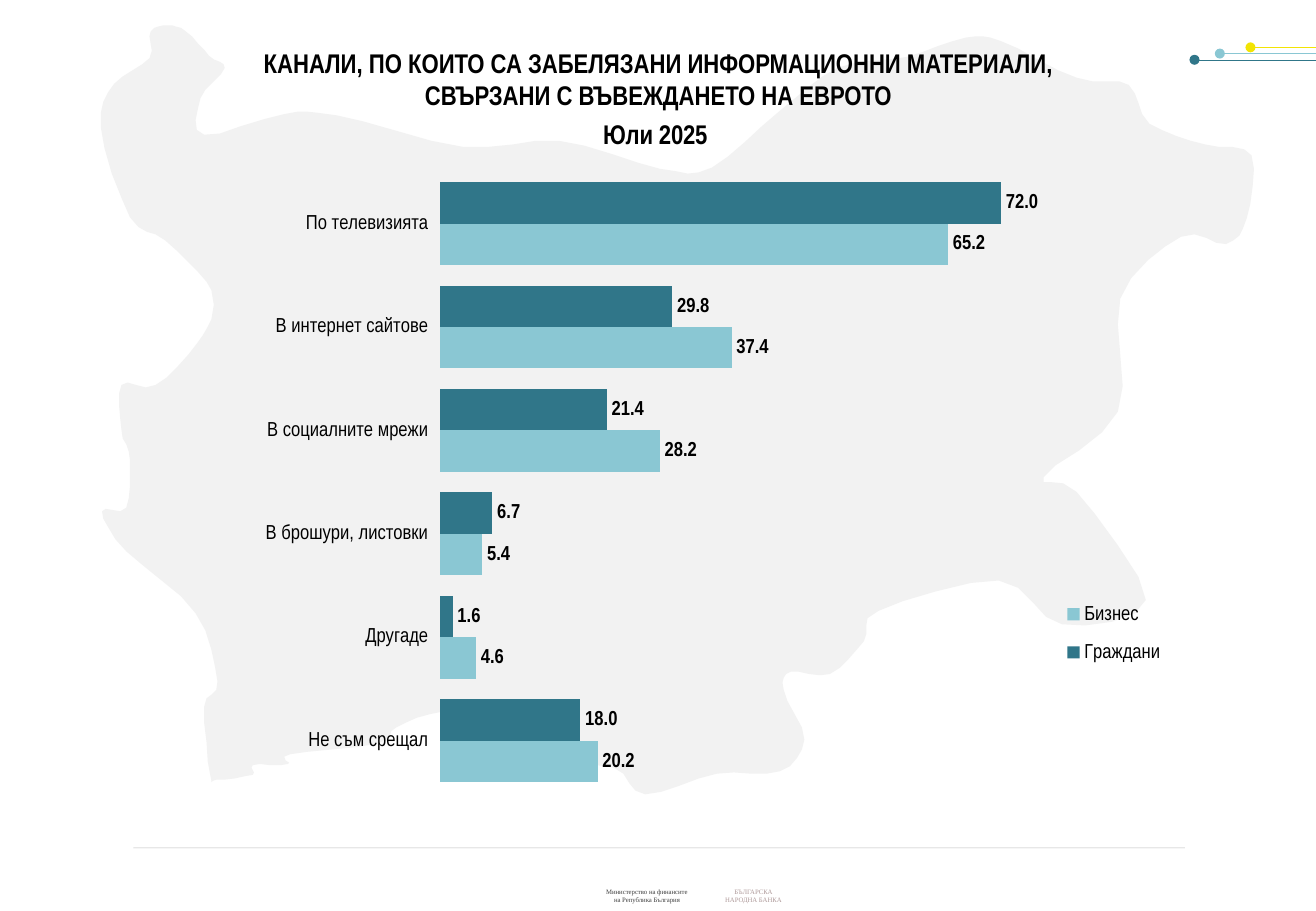
from lxml import etree
from pptx import Presentation
from pptx.chart.data import CategoryChartData
from pptx.dml.color import RGBColor
from pptx.enum.chart import XL_CHART_TYPE, XL_LABEL_POSITION, XL_LEGEND_POSITION, XL_TICK_MARK
from pptx.enum.shapes import MSO_CONNECTOR
from pptx.enum.text import PP_ALIGN
from pptx.oxml.ns import qn
from pptx.util import Cm, Pt

BARS = XL_CHART_TYPE.BAR_CLUSTERED
OUTER = XL_LABEL_POSITION.OUTSIDE_END
RIGHT = XL_LEGEND_POSITION.RIGHT
TICK = XL_TICK_MARK.OUTSIDE
LINE = MSO_CONNECTOR.STRAIGHT
CENTER = PP_ALIGN.CENTER

COLORS = {"teal": "307689", "sky": "8AC7D3", "yellow": "F2E404", "rule": "A6A6A6",
          "map": "F2F2F2", "black": "000000", "gray": "404040", "mauve": "AF9A9A"}
NARROW, ROMAN = "Arial Narrow", "Times New Roman"

CATS = ["По телевизията", "В интернет сайтове", "В социалните мрежи",
        "В брошури, листовки", "Другаде", "Не съм срещал"]
SERIES = [("Граждани", "teal", [72, 29.8, 21.4, 6.7, 1.6, 18]),
          ("Бизнес", "sky", [65.2, 37.4, 28.2, 5.4, 4.6, 20.2])]
MONTH = "Юли 2025"
FRAME = (2.21, 1.68, 23.95, 15.32)
PLOT = {"x": 0.29, "y": 0.125, "w": 0.68, "h": 0.847}
PLOT["x"] = 0.292
LEGEND = {"x": 0.82, "y": 0.69, "w": 0.12, "h": 0.13}
HEAD = {"x": 0.43, "y": 0.05}

# Left, top, width, height in cm
TEXTS = [
    ((12.37, 18.44, 2.31, 0.61), ["Министерство на финансите на Република България"],
     {"size": 4, "name": ROMAN, "color": "gray"}),
    ((14.86, 18.44, 1.78, 0.61), ["БЪЛГАРСКА НАРОДНА БАНКА"],
     {"size": 4, "name": ROMAN, "color": "mauve"}),
    ((0.33, 0.84, 26.87, 1.63),
     ["КАНАЛИ, ПО КОИТО СА ЗАБЕЛЯЗАНИ ИНФОРМАЦИОННИ МАТЕРИАЛИ,",
      "СВЪРЗАНИ С ВЪВЕЖДАНЕТО НА ЕВРОТО"],
     {"size": 16, "name": NARROW, "color": "black", "bold": True}),
]

# Start x, end x, y in cm, colour, extra
LINES = [(24.97, 27.51, 1.25, "teal", "dot"), (26.14, 27.51, 0.99, "yellow", "dot"),
         (25.5, 27.51, 1.12, "sky", "dot"), (2.79, 24.77, 17.73, "rule", "faint")]

# Corner points of the country outline, in hundredths of an inch
MAP = [
    (124, 26), (138, 21), (153, 26), (172, 46), (185, 56), (165, 81), (168, 111),
    (234, 94), (277, 95), (381, 121), (460, 116), (543, 139), (586, 138), (641, 92),
    (689, 56), (746, 47), (795, 31), (824, 34), (886, 64), (929, 70), (946, 102),
    (992, 119), (1030, 128), (1026, 180), (1009, 201), (972, 195), (922, 246),
    (920, 339), (859, 393), (886, 405), (943, 494), (874, 514), (822, 478), (723, 503),
    (711, 528), (683, 555), (651, 553), (645, 568), (662, 609), (642, 635), (590, 637),
    (531, 654), (505, 632), (442, 624), (404, 593), (364, 586), (326, 599), (311, 612),
    (239, 621), (237, 629), (208, 630), (208, 638), (178, 642), (173, 638), (168, 582),
    (179, 561), (161, 505), (104, 454), (84, 421), (104, 418), (107, 379), (100, 354),
    (100, 317), (128, 317), (162, 283), (175, 257), (170, 232), (136, 198), (107, 179),
    (83, 105), (94, 69), (123, 48),
]
STEPS = 4


def tint(name):
    return RGBColor.from_string(COLORS[name])


def style(font, form):
    for key, val in form.items():
        if key == "color":
            font.color.rgb = tint(val)
        else:
            setattr(font, key, Pt(val) if key == "size" else val)


def add_line(slide, start, end, y, color, extra):
    line = slide.shapes.add_connector(LINE, Cm(start), Cm(y), Cm(end), Cm(y))
    line.line.color.rgb = tint(color)
    line.line.width = Pt(0.25)
    props = line.element.spPr
    ln = props.find(qn("a:ln"))
    if extra == "dot":
        etree.SubElement(ln, qn("a:headEnd"), type="oval")
    else:
        etree.SubElement(ln.find(".//" + qn("a:srgbClr")), qn("a:alpha"), val="74000")
    etree.SubElement(props, qn("a:effectLst"))


def smooth(points):
    """Round a closed outline with a spline that keeps every corner point."""
    curve = []
    for i, b in enumerate(points):
        a, c, d = (points[(i + k) % len(points)] for k in (-1, 1, 2))
        for step in range(STEPS):
            t = step / STEPS
            curve.append(tuple(
                q + t / 2 * (r - p + t * (2 * p - 5 * q + 4 * r - s + t * (3 * (q - r) + s - p)))
                for p, q, r, s in zip(a, b, c, d)))
    return curve


def add_map(slide):
    first, *rest = smooth(MAP)
    build = slide.shapes.build_freeform(*first, scale=Cm(2.54) / 100)
    build.add_line_segments(rest, close=True)
    land = build.convert_to_shape()
    land.shadow.inherit = False
    land.fill.solid()
    land.fill.fore_color.rgb = tint("map")
    land.line.fill.background()


def add_text(slide, box, lines, form):
    frame = slide.shapes.add_textbox(*map(Cm, box)).text_frame
    frame.word_wrap = True
    frame.text = "\n".join(lines)
    for para in frame.paragraphs:
        para.alignment = CENTER
        style(para.font, form)


def place(part, spot, after=None):
    """Give a chart part a fixed place, as shares of the chart frame."""
    for old in part.findall(qn("c:layout")):
        part.remove(old)
    layout = etree.Element(qn("c:layout"))
    man = etree.SubElement(layout, qn("c:manualLayout"))
    if after is None:
        etree.SubElement(man, qn("c:layoutTarget"), val="inner")
    for key in "xy":
        etree.SubElement(man, qn(f"c:{key}Mode"), val="edge")
    for key, val in spot.items():
        etree.SubElement(man, qn(f"c:{key}"), val=str(val))
    part.insert(0 if after is None else part.index(part.find(qn(after))) + 1, layout)


def add_bars(slide):
    data = CategoryChartData(number_format="0.0")
    data.categories = CATS
    for name, _, vals in SERIES:
        data.add_series(name, vals)
    chart = slide.shapes.add_chart(BARS, *map(Cm, FRAME), data).chart
    base = {"size": 12, "name": NARROW, "color": "black"}
    style(chart.font, {**base, "size": 10})

    chart.has_title = True
    frame = chart.chart_title.text_frame
    frame.text = MONTH
    style(frame.paragraphs[0].runs[0].font, {**base, "size": 16, "bold": True})
    chart.has_legend = True
    chart.legend.position = RIGHT
    chart.legend.include_in_layout = False
    style(chart.legend.font, base)

    cat, val = chart.category_axis, chart.value_axis
    cat.reverse_order = True
    cat.major_tick_mark = TICK
    cat.format.line.fill.background()
    style(cat.tick_labels.font, base)
    val.minimum_scale, val.maximum_scale = 0, 100
    val.has_major_gridlines = val.visible = False

    plot = chart.plots[0]
    plot.gap_width, plot.overlap, plot.vary_by_categories = 50, 0, False
    for row, (_, color, _) in zip(plot.series, SERIES):
        row.format.fill.solid()
        row.format.fill.fore_color.rgb = tint(color)
        tags = row.data_labels
        tags.show_value = True
        tags.position = OUTER
        tags.number_format, tags.number_format_is_linked = "0.0", False
        style(tags.font, {**base, "bold": True})

    root = chart.element
    place(root.find(".//" + qn("c:plotArea")), PLOT)
    place(root.find(".//" + qn("c:legend")), LEGEND, "c:legendPos")
    place(root.find(".//" + qn("c:title")), HEAD, "c:tx")


def main():
    deck = Presentation()
    deck.slide_width, deck.slide_height = Cm(27.51), Cm(19.05)
    slide = deck.slides.add_slide(deck.slide_layouts[6])
    for line in LINES:
        add_line(slide, *line)
    add_map(slide)
    for text in TEXTS:
        add_text(slide, *text)
    add_bars(slide)
    deck.save("out.pptx")


if __name__ == "__main__":
    main()
